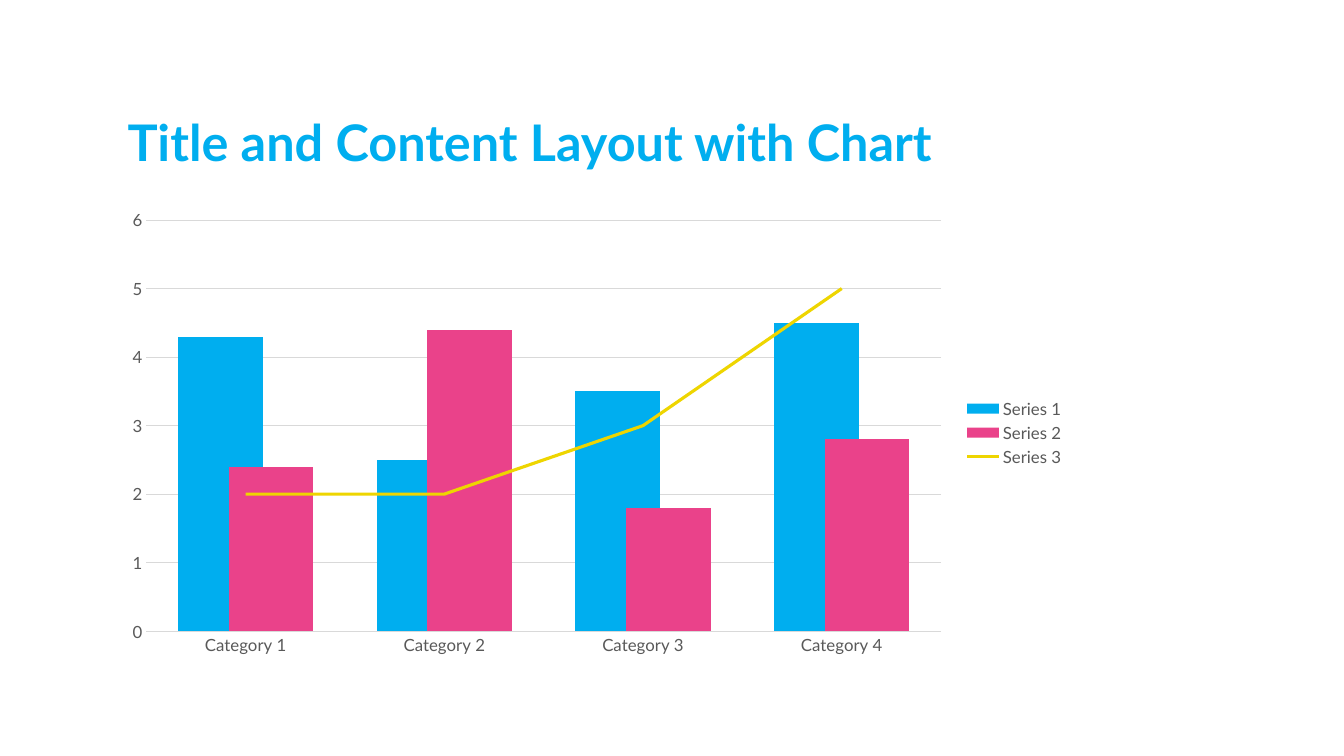
from pptx import Presentation
from pptx.chart.data import CategoryChartData
from pptx.dml.color import RGBColor
from pptx.enum.chart import XL_CHART_TYPE, XL_LEGEND_POSITION, XL_MARKER_STYLE, XL_TICK_MARK
from pptx.enum.text import MSO_ANCHOR
from pptx.oxml import parse_xml
from pptx.oxml.ns import nsdecls, qn
from pptx.util import Inches, Pt

COLUMNS, ROWS = 80, 45
BLUE, PINK, YELLOW = "00AEEF", "EA428A", "EED500"
GREY, RULE = "595959", "D9D9D9"

CATEGORIES = [f"Category {number}" for number in range(1, 5)]
BARS = [("Series 1", (4.3, 2.5, 3.5, 4.5), BLUE),
        ("Series 2", (2.4, 4.4, 1.8, 2.8), PINK)]
LINE = ("Series 3", (2, 2, 3, 5), YELLOW)


def color(value):
    return RGBColor.from_string(value)


def format_font(font, size, fill, bold=False):
    font.name, font.size, font.bold = "Lato", Pt(size), bold
    font.color.rgb = color(fill)


def write(frame, text, size=12, fill=GREY, bold=False, spacing=1.0):
    paragraph = frame.paragraphs[0]
    paragraph.line_spacing = spacing
    run = paragraph.add_run()
    run.text = text
    format_font(run.font, size, fill, bold)


def format_line(line, fill, width):
    line.color.rgb = color(fill)
    line.width = Pt(width)


class ChartSlide:
    """Slide on a grid of 80 columns and 45 rows."""

    def __init__(self, presentation):
        self.slide = presentation.slides.add_slide(presentation.slide_layouts[6])
        self.column = presentation.slide_width / COLUMNS
        self.row = presentation.slide_height / ROWS

    def area(self, left, top, width, height):
        return (round(left * self.column), round(top * self.row),
                round(width * self.column), round(height * self.row))

    def title(self, text, *cells):
        shape = self.slide.shapes.add_textbox(*self.area(*cells))
        frame = shape.text_frame
        frame.word_wrap = True
        frame.vertical_anchor = MSO_ANCHOR.BOTTOM
        write(frame, text, size=36, fill=BLUE, bold=True, spacing=0.8)

    def combined_chart(self, *cells):
        data = CategoryChartData()
        data.categories = CATEGORIES
        for name, values, _ in [*BARS, LINE]:
            data.add_series(name, values)
        chart = self.slide.shapes.add_chart(
            XL_CHART_TYPE.COLUMN_CLUSTERED, *self.area(*cells), data).chart
        chart.has_title = False
        format_font(chart.font, 12, GREY)
        self.format_bars(chart.plots[0])
        self.move_last_to_line(chart)
        self.format_axes(chart)
        self.place_plot(chart)
        # Legend
        chart.has_legend = True
        chart.legend.position = XL_LEGEND_POSITION.RIGHT
        chart.legend.include_in_layout = False
        format_font(chart.legend.font, 12, GREY)

    def format_bars(self, plot):
        plot.gap_width, plot.overlap = 75, 40
        plot.vary_by_categories = False
        for series, (_, _, fill) in zip(plot.series, BARS):
            series.format.fill.solid()
            series.format.fill.fore_color.rgb = color(fill)
            series.invert_if_negative = False

    def move_last_to_line(self, chart):
        bar_chart = chart.plots[0]._element
        series_element = bar_chart.findall(qn("c:ser"))[-1]
        for bar_setting in series_element.findall(qn("c:invertIfNegative")):
            series_element.remove(bar_setting)
        line_chart = parse_xml(
            f'<c:lineChart {nsdecls("c")}><c:grouping val="standard"/>'
            '<c:varyColors val="0"/></c:lineChart>')
        line_chart.append(series_element)
        for axis in bar_chart.findall(qn("c:axId")):
            line_chart.append(parse_xml(
                f'<c:axId {nsdecls("c")} val="{axis.get("val")}"/>'))
        bar_chart.addnext(line_chart)
        series = chart.plots[1].series[0]
        format_line(series.format.line, LINE[2], 2.25)
        series.marker.style = XL_MARKER_STYLE.NONE
        series.smooth = False

    def format_axes(self, chart):
        for axis in (chart.category_axis, chart.value_axis):
            axis.major_tick_mark = axis.minor_tick_mark = XL_TICK_MARK.NONE
            format_font(axis.tick_labels.font, 12, GREY)
        format_line(chart.category_axis.format.line, RULE, 0.75)
        value_axis = chart.value_axis
        value_axis.minimum_scale, value_axis.maximum_scale = 0, 6
        value_axis.major_unit = 1
        value_axis.format.line.fill.background()
        value_axis.has_major_gridlines = True
        format_line(value_axis.major_gridlines.format.line, RULE, 0.75)

    def place_plot(self, chart):
        # Inner plot area, as shares of the chart
        plot_area = chart.plots[0]._element.getparent()
        for old in plot_area.findall(qn("c:layout")):
            plot_area.remove(old)
        shares = {"x": 0.03, "y": 0.04, "w": 0.83, "h": 0.89}
        sizes = "".join(f'<c:{key} val="{share}"/>' for key, share in shares.items())
        plot_area.insert(0, parse_xml(
            f'<c:layout {nsdecls("c")}><c:manualLayout>'
            '<c:layoutTarget val="inner"/><c:xMode val="edge"/><c:yMode val="edge"/>'
            f'{sizes}</c:manualLayout></c:layout>'))


def main():
    presentation = Presentation()
    presentation.slide_width = Inches(13.33)
    presentation.slide_height = Inches(7.5)
    slide = ChartSlide(presentation)
    # Heading
    slide.title("Title and Content Layout with Chart", 7, 3.5, 57, 7)
    # Columns with a line
    slide.combined_chart(7, 12, 57, 27.5)
    presentation.save("out.pptx")


if __name__ == "__main__":
    main()
